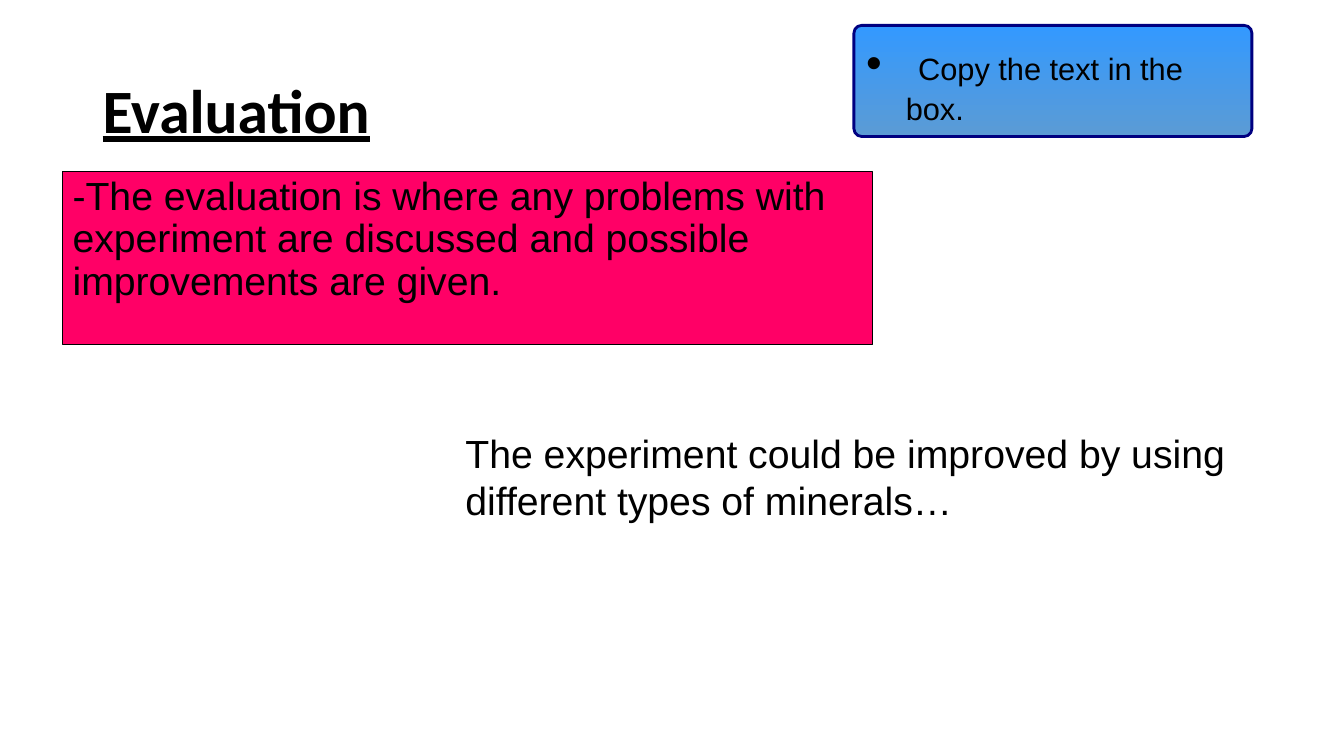
import pptx
import pptx.dml.color
import pptx.enum.dml
import pptx.enum.shapes
import pptx.enum.text
import pptx.util
from lxml import etree
from pptx.util import Cm, Pt

TITLE = "Evaluation"
DEFINITION = ("-The evaluation is where any problems with experiment are discussed "
              "and possible improvements are given.")
INSTRUCTION = "Copy the text in the box."
EXAMPLE = "The experiment could be improved by using different types of minerals…"

# left, top, width, height in centimetres
PLACES = {
    "title": (2.33, 1.01, 29.21, 3.68),
    "definition": (1.58, 4.33, 20.42, 4.35),
    "instruction": (21.52, 0.64, 10.03, 2.8),
    "example": (11.48, 10.69, 21.06, 2.64),
}

THEME = {
    "text": "000000", "pink": "FF0066", "navy": "000080",
    "gradient": ("3399FF", "5B9BD5"),
    "title_font": "Calibri", "body_font": "Arial",
    "title_size": 44, "body_size": 28, "instruction_size": 22, "bullet_size": 32,
}


def color(name):
    return pptx.dml.color.RGBColor.from_string(name)


def place(name):
    return [Cm(length) for length in PLACES[name]]


def add_text(paragraph, text, size=THEME["body_size"], font=THEME["body_font"],
             bold=False, underline=False):
    run = paragraph.add_run()
    run.text = text
    run.font.size = Pt(size)
    run.font.name = font
    run.font.bold = bold
    run.font.underline = underline
    run.font.color.rgb = color(THEME["text"])


def prepare(shape, anchor=pptx.enum.text.MSO_ANCHOR.TOP, line_spacing=None):
    """Set wrapping and alignment, and return the first paragraph."""
    frame = shape.text_frame
    frame.word_wrap = True
    frame.vertical_anchor = anchor
    paragraph = frame.paragraphs[0]
    paragraph.alignment = pptx.enum.text.PP_ALIGN.LEFT
    paragraph.line_spacing = line_spacing
    return paragraph


def set_line(shape, name, width):
    shape.line.color.rgb = color(name)
    shape.line.width = Pt(width)


def add_bullet(paragraph, indent):
    properties = paragraph._p.get_or_add_pPr()
    properties.set("marL", str(indent))
    properties.set("indent", str(-indent))
    namespace = "{http://schemas.openxmlformats.org/drawingml/2006/main}"
    etree.SubElement(properties, namespace + "buFont", typeface=THEME["body_font"])
    etree.SubElement(properties, namespace + "buChar", char="•")


def add_title(slide):
    title = slide.shapes.title
    title.left, title.top, title.width, title.height = place("title")
    paragraph = prepare(title, pptx.enum.text.MSO_ANCHOR.MIDDLE, 0.9)
    add_text(paragraph, TITLE, size=THEME["title_size"], font=THEME["title_font"],
             bold=True, underline=True)


def add_definition(slide):
    box = slide.shapes.add_shape(pptx.enum.shapes.MSO_SHAPE.RECTANGLE, *place("definition"))
    box.shadow.inherit = False
    box.fill.solid()
    box.fill.fore_color.rgb = color(THEME["pink"])
    set_line(box, THEME["text"], 0.75)
    add_text(prepare(box, line_spacing=0.9), DEFINITION)


def add_instruction(slide):
    box = slide.shapes.add_shape(pptx.enum.shapes.MSO_SHAPE.ROUNDED_RECTANGLE,
                                 *place("instruction"))
    box.adjustments[0] = 0.07
    box.shadow.inherit = False
    box.fill.gradient()
    box.fill.gradient_angle = 270
    for position, (stop, name) in enumerate(zip(box.fill.gradient_stops, THEME["gradient"])):
        stop.position = position
        stop.color.rgb = color(name)
    set_line(box, THEME["navy"], 2)
    paragraph = prepare(box, pptx.enum.text.MSO_ANCHOR.MIDDLE)
    add_bullet(paragraph, Cm(1))
    add_text(paragraph, " ", size=THEME["bullet_size"], bold=True)
    add_text(paragraph, INSTRUCTION, size=THEME["instruction_size"])


def add_example(slide):
    box = slide.shapes.add_textbox(*place("example"))
    add_text(prepare(box), EXAMPLE)


def main():
    presentation = pptx.Presentation()
    presentation.slide_width = Cm(33.87)
    presentation.slide_height = Cm(19.05)
    slide = presentation.slides.add_slide(presentation.slide_layouts.get_by_name("Title Only"))
    add_title(slide)
    add_definition(slide)
    add_instruction(slide)
    add_example(slide)
    presentation.save("out.pptx")


if __name__ == "__main__":
    main()
